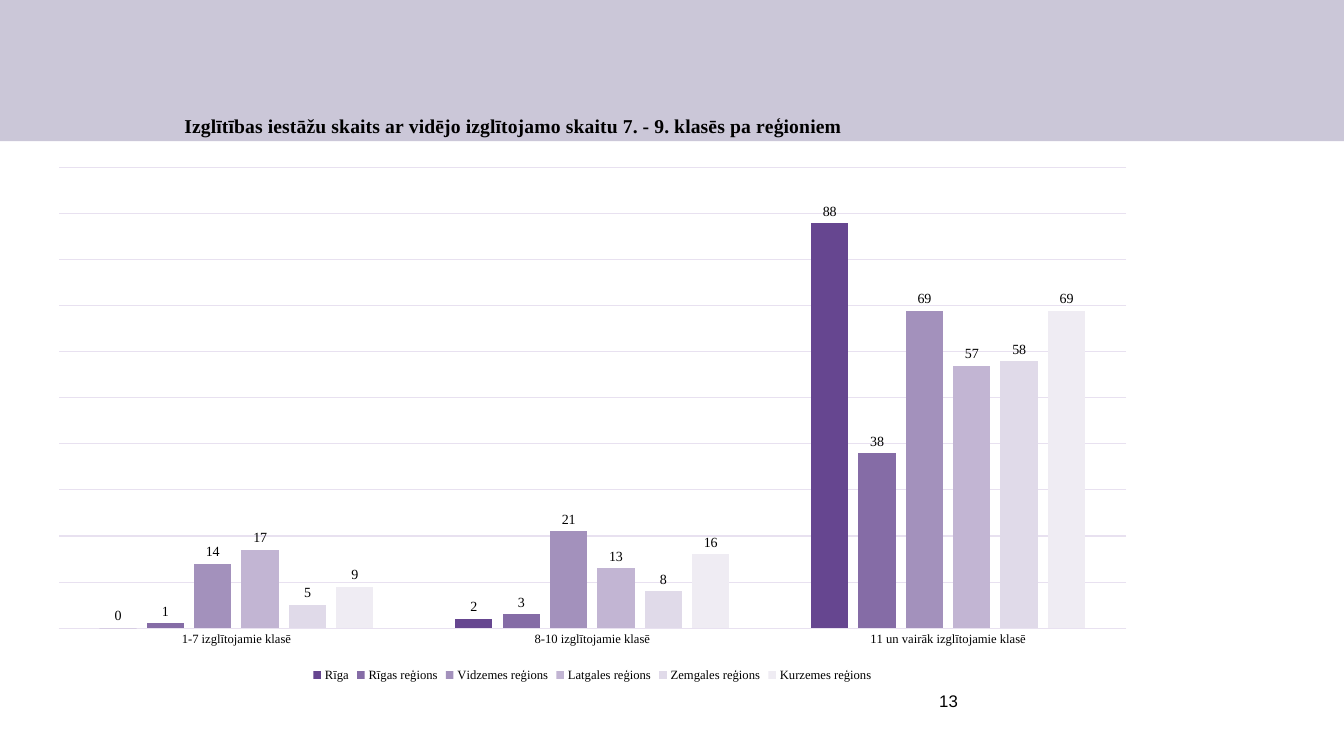
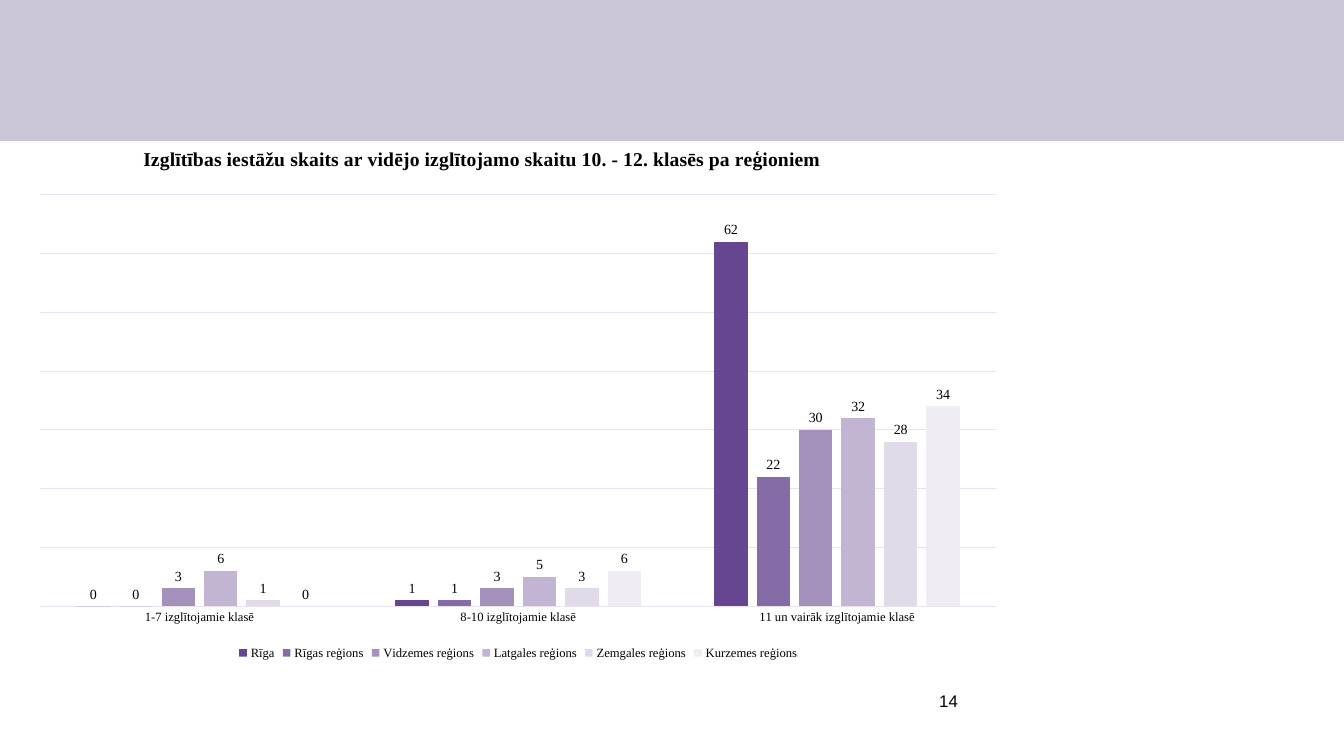
import dataclasses

import lxml.etree
import pptx
import pptx.chart.data
import pptx.dml.color
import pptx.enum.chart
import pptx.enum.shapes
import pptx.enum.text
import pptx.oxml.ns
import pptx.util

Inches = pptx.util.Inches


@dataclasses.dataclass(frozen=True)
class Theme:
    serif: str = "Times New Roman"
    sans: str = "Arial"
    ink: str = "000000"
    band: str = "CBC7D8"
    grid: str = "E8E1F0"
    bars: tuple = ("664690", "856CA6", "A391BC", "C2B5D3", "E0DAE9", "EFECF3")
    title: int = 14
    page: int = 12
    label: int = 10
    small: int = 9
    hair: float = 0.75


GROUPS = ("1-7 izglītojamie klasē", "8-10 izglītojamie klasē",
          "11 un vairāk izglītojamie klasē")
REGIONS = ("Rīga", "Rīgas reģions", "Vidzemes reģions", "Latgales reģions",
           "Zemgales reģions", "Kurzemes reģions")


def color(code):
    return pptx.dml.color.RGBColor.from_string(code)


def place(parent, index, **spots):
    """Give a chart part a manual layout in fractions of the chart area."""
    qn = pptx.oxml.ns.qn
    for old in parent.findall(qn("c:layout")):
        parent.remove(old)
    layout = lxml.etree.Element(qn("c:layout"))
    manual = lxml.etree.SubElement(layout, qn("c:manualLayout"))
    if "w" in spots:
        lxml.etree.SubElement(manual, qn("c:layoutTarget")).set("val", "inner")
    for key in ("x", "y"):
        lxml.etree.SubElement(manual, qn(f"c:{key}Mode")).set("val", "edge")
    for key, value in spots.items():
        lxml.etree.SubElement(manual, qn(f"c:{key}")).set("val", str(value))
    parent.insert(index, layout)


class Deck:
    def __init__(self, theme):
        self.theme = theme
        self.show = pptx.Presentation()
        self.show.slide_width = Inches(13.33)
        self.show.slide_height = Inches(7.5)
        self.slide = None

    def style(self, font, size, face=None, bold=False):
        font.name = face or self.theme.serif
        font.size = pptx.util.Pt(size)
        font.bold = bold
        font.color.rgb = color(self.theme.ink)

    def rule(self, line):
        line.color.rgb = color(self.theme.grid)
        line.width = pptx.util.Pt(self.theme.hair)

    def start(self, number):
        """Add a slide with the top band and its page number."""
        self.slide = self.show.slides.add_slide(self.show.slide_layouts[6])
        self.band()
        self.page(number)

    def band(self):
        band = self.slide.shapes.add_shape(
            pptx.enum.shapes.MSO_SHAPE.RECTANGLE,
            0, 0, self.show.slide_width, Inches(1.4))
        band.shadow.inherit = False
        band.fill.solid()
        band.fill.fore_color.rgb = color(self.theme.band)
        band.line.fill.background()

    def page(self, number):
        box = self.slide.shapes.add_textbox(
            Inches(6.44), Inches(6.75), Inches(3.11), Inches(0.4))
        frame = box.text_frame
        frame.word_wrap = True
        frame.vertical_anchor = pptx.enum.text.MSO_ANCHOR.MIDDLE
        frame.margin_left = frame.margin_right = Inches(0.05)
        frame.margin_top = frame.margin_bottom = Inches(0.05)
        frame.text = str(number)
        line = frame.paragraphs[0]
        line.alignment = pptx.enum.text.PP_ALIGN.RIGHT
        self.style(line.runs[0].font, self.theme.page, self.theme.sans)

    def chart(self, area, title, rows, top, spot, plot):
        kinds = pptx.enum.chart
        data = pptx.chart.data.CategoryChartData(number_format="0")
        data.categories = GROUPS
        for name, row in zip(REGIONS, rows):
            data.add_series(name, row)
        chart = self.slide.shapes.add_chart(
            kinds.XL_CHART_TYPE.COLUMN_CLUSTERED,
            *(Inches(side) for side in area), data).chart
        self.style(chart.font, self.theme.label)
        self.head(chart, title, spot)
        self.axes(chart, top)
        self.bars(chart.plots[0])
        place(chart.element.xpath("c:chart/c:plotArea")[0], 0, **plot)
        chart.has_legend = True
        chart.legend.position = kinds.XL_LEGEND_POSITION.BOTTOM
        chart.legend.include_in_layout = False
        self.style(chart.legend.font, self.theme.small)

    def head(self, chart, text, spot):
        chart.has_title = True
        title = chart.chart_title
        title.include_in_layout = False
        title.text_frame.text = text
        run = title.text_frame.paragraphs[0].runs[0]
        self.style(run.font, self.theme.title, bold=True)
        place(title.element, 1, **spot)

    def axes(self, chart, top):
        axis = chart.category_axis
        axis.major_tick_mark = pptx.enum.chart.XL_TICK_MARK.NONE
        self.style(axis.tick_labels.font, self.theme.small)
        self.rule(axis.format.line)
        scale = chart.value_axis
        scale.minimum_scale, scale.maximum_scale = 0, top
        scale.major_unit = 10
        scale.has_major_gridlines = True
        self.rule(scale.major_gridlines.format.line)
        scale.visible = False

    def bars(self, plot):
        plot.gap_width, plot.overlap = 219, -27
        plot.vary_by_categories = False
        plot.has_data_labels = True
        labels = plot.data_labels
        labels.show_value = True
        labels.position = pptx.enum.chart.XL_LABEL_POSITION.OUTSIDE_END
        self.style(labels.font, self.theme.label)
        for series, code in zip(plot.series, self.theme.bars):
            series.format.fill.solid()
            series.format.fill.fore_color.rgb = color(code)


def main():
    deck = Deck(Theme())

    deck.start(13)
    deck.chart(
        (0.36, 1.03, 11.03, 5.78),
        "Izglītības iestāžu skaits ar vidējo izglītojamo skaitu "
        "7. - 9. klasēs pa reģioniem",
        ((0, 2, 88), (1, 3, 38), (14, 21, 69),
         (17, 13, 57), (5, 8, 58), (9, 16, 69)),
        100, {"x": 0.13, "y": 0.01},
        {"x": 0.02, "y": 0.11, "w": 0.96, "h": 0.79})

    deck.start(14)
    deck.chart(
        (0.2, 1.36, 9.88, 5.23),
        "Izglītības iestāžu skaits ar vidējo izglītojamo skaitu "
        "10. - 12. klasēs pa reģioniem",
        ((0, 1, 62), (0, 1, 22), (3, 3, 30),
         (6, 5, 32), (1, 3, 28), (0, 6, 34)),
        70, {"x": 0.12, "y": 0.01},
        {"x": 0.02, "y": 0.11, "w": 0.96, "h": 0.78})

    deck.show.save("out.pptx")


if __name__ == "__main__":
    main()
